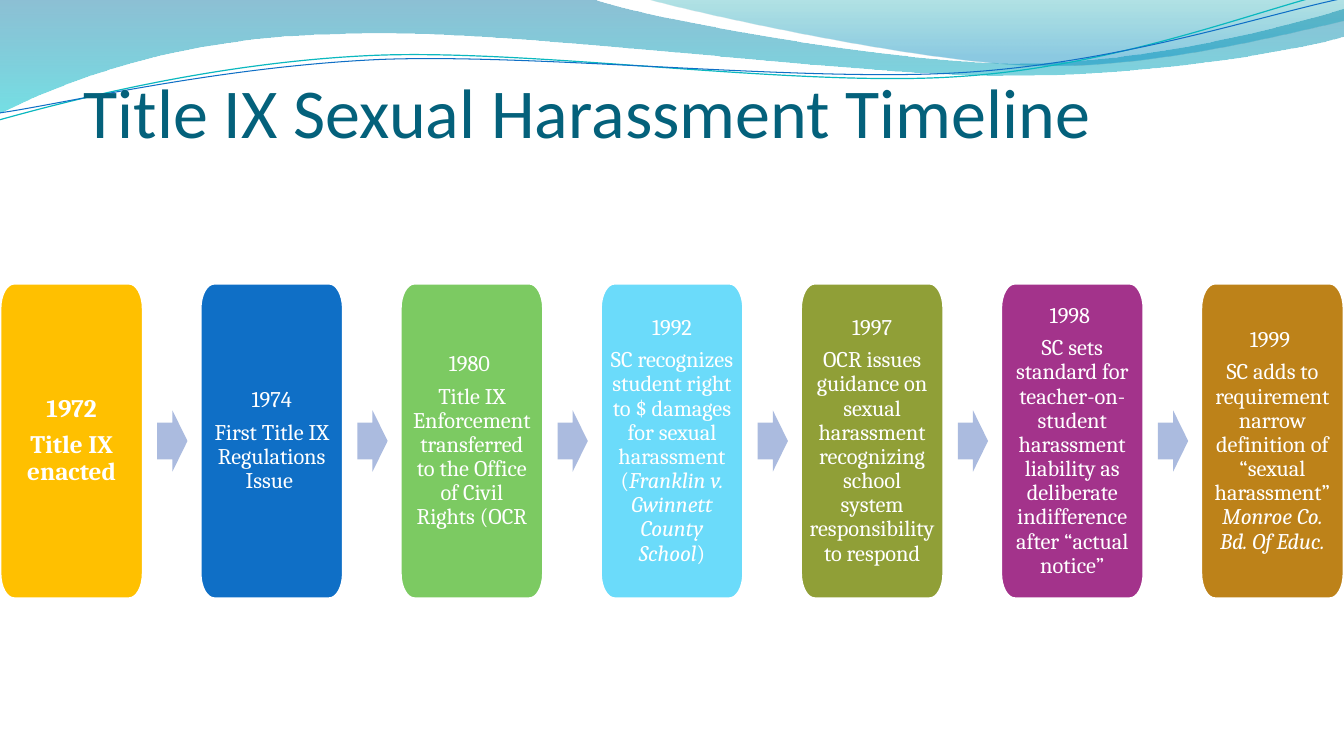
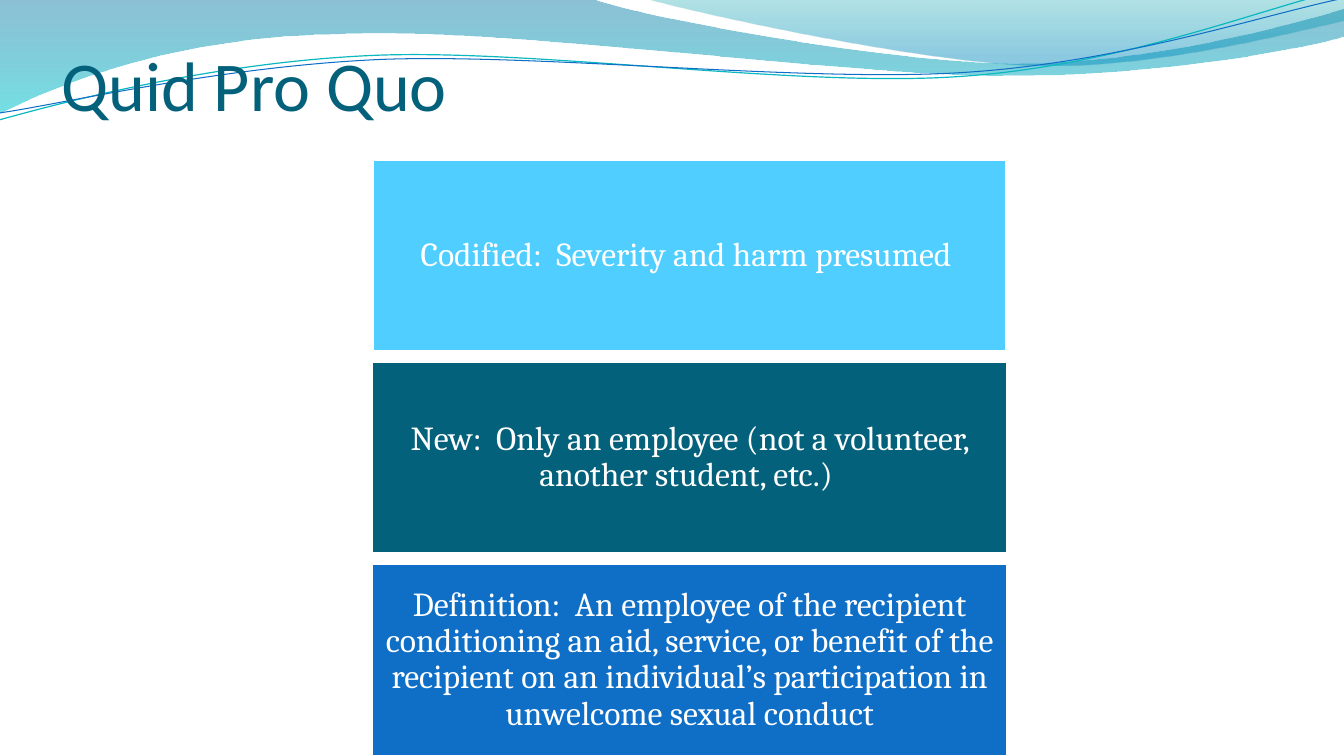
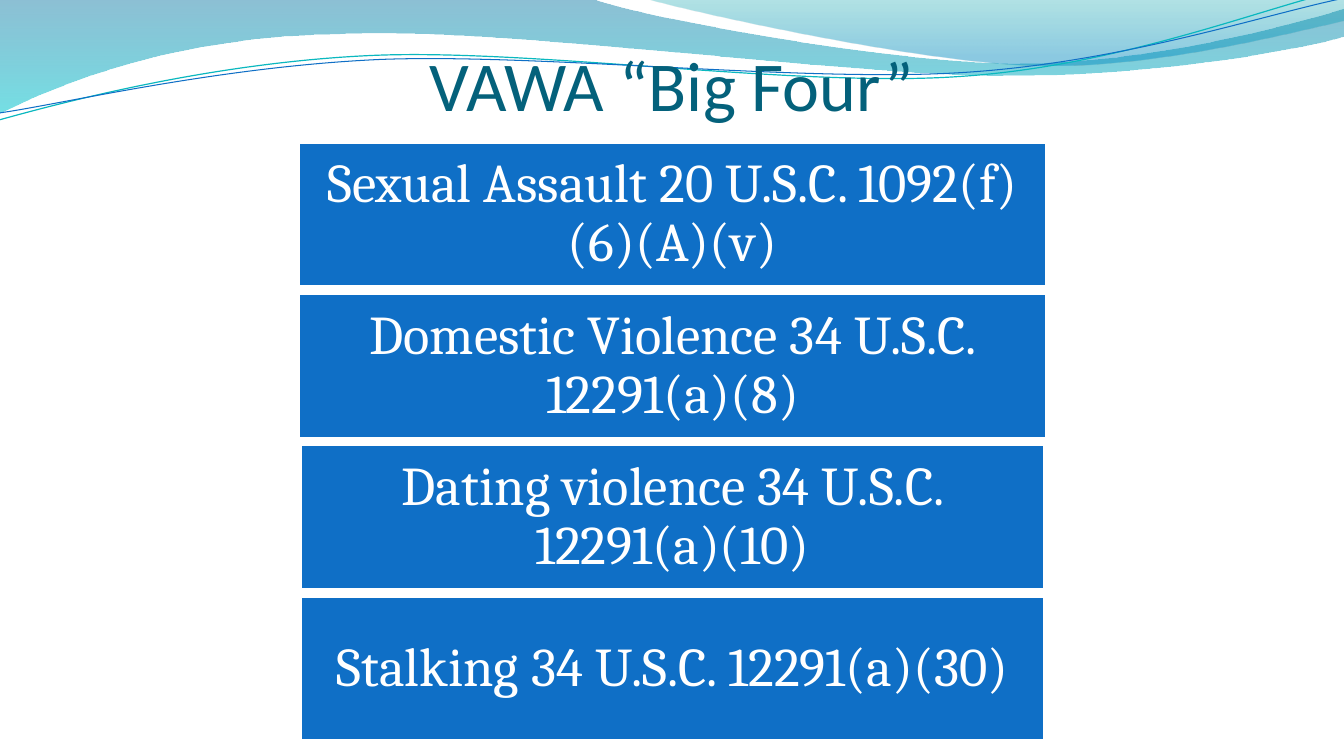
from dataclasses import dataclass

from lxml import etree
from pptx import Presentation
from pptx.dml.color import RGBColor
from pptx.enum.shapes import MSO_SHAPE
from pptx.enum.text import MSO_ANCHOR, MSO_AUTO_SIZE, PP_ALIGN
from pptx.oxml.ns import qn
from pptx.util import Inches, Pt

LEFT, CENTER = PP_ALIGN.LEFT, PP_ALIGN.CENTER
MIDDLE, BOTTOM = MSO_ANCHOR.MIDDLE, MSO_ANCHOR.BOTTOM
RECTANGLE, RIGHT_ARROW = MSO_SHAPE.RECTANGLE, MSO_SHAPE.RIGHT_ARROW
NO_AUTOFIT = MSO_AUTO_SIZE.NONE
TITLE_ONLY = 5


@dataclass(frozen=True)
class Theme:
    heading_font: str = "Calibri"
    body_font: str = "Cambria"
    title_size: int = 50
    first_card_size: int = 18
    card_size: int = 16
    quid_size: int = 24
    offence_size: int = 39
    white: str = "FFFFFF"
    teal: str = "04617B"
    blue: str = "0F6FC6"
    sky: str = "4FCEFF"
    aqua: str = "0AB8BF"
    arrow: str = "ABBBDF"
    gold: str = "FFC000"
    green: str = "7CCA62"
    cyan: str = "6BDBFA"
    olive: str = "909F37"
    purple: str = "A3338B"
    bronze: str = "BD8219"


THEME = Theme()

# Outlines: a start point, then line ends (2 numbers) or Bézier curves (6 numbers)
WAVE_BANDS = [
    ([(0, 0), (5.87, -0.01),
      (6.34, 0.17, 8.85, 0.63, 10.11, 0.63),
      (11.38, 0.63, 12.78, 0.26, 13.33, 0.09), (13.35, 0.36),
      (13.11, 0.44, 11.6, 0.76, 9.94, 0.75),
      (8.29, 0.75, 5.09, 0.28, 3.43, 0.34),
      (1.72, 0.36, 0.61, 0.83, -0.01, 1.13)],
     [(0, "0074A1", 45), (1, "00C6CF", 55)]),
    ([(6.39, -0.01),
      (6.79, 0.11, 9.09, 0.62, 10.25, 0.65),
      (11.41, 0.69, 12.82, 0.32, 13.33, 0.21), (13.33, 0)],
     [(0, "00A1A9", 30), (0.8, "008BBF", 45)]),
]
WAVE_LINES = [
    ([(-0.01, 1.19),
      (0.64, 1.01, 2.11, 0.62, 3.69, 0.55),
      (5.27, 0.48, 7.9, 0.87, 9.5, 0.76),
      (11.1, 0.66, 12.52, 0.08, 13.31, -0.1)], THEME.aqua, 0.85),
    ([(0, 1.12),
      (0.63, 1.03, 2.18, 0.66, 3.78, 0.59),
      (5.37, 0.53, 7.96, 0.82, 9.55, 0.72),
      (11.15, 0.62, 12.55, 0.14, 13.34, -0.02)], THEME.blue, 0.75),
]

# Timeline cards: fill, year, then the (text, italic) runs below it
TIMELINE = [
    (THEME.gold, "1972", [("Title IX enacted", False)]),
    (THEME.blue, "1974", [("First Title IX Regulations Issue ", False)]),
    (THEME.green, "1980 ", [
        ("Title IX Enforcement transferred to the Office of Civil Rights (OCR", False)]),
    (THEME.cyan, "1992", [
        ("SC recognizes student right to $ damages for sexual harassment (", False),
        ("Franklin v. Gwinnett County School", True), (")", False)]),
    (THEME.olive, "1997", [
        ("OCR issues guidance on sexual harassment recognizing school system "
         "responsibility to respond", False)]),
    (THEME.purple, "1998 ", [
        ("SC sets standard for teacher-on-student harassment liability as "
         "deliberate indifference after “actual notice”", False)]),
    (THEME.bronze, "1999 ", [
        ("SC adds to requirement narrow definition of “sexual harassment” ", False),
        ("Monroe Co. Bd. Of Educ.", True)]),
]

# Stacked bars: width, fill, text
QUID_PRO_QUO = [
    (6.28, THEME.sky, "Codified:  Severity and harm presumed "),
    (6.31, THEME.teal,
     "New:  Only an employee (not a volunteer, another student, etc.) "),
    (6.3, THEME.blue,
     "Definition:  An employee of the recipient conditioning an aid, service, or "
     "benefit of the recipient on an individual’s participation in unwelcome "
     "sexual conduct"),
]
BIG_FOUR = [
    (7.42, THEME.blue, "Sexual Assault 20 U.S.C. 1092(f)(6)(A)(v)"),
    (7.42, THEME.blue, "Domestic Violence 34 U.S.C. 12291(a)(8)"),
    (7.38, THEME.blue, "Dating violence 34 U.S.C. 12291(a)(10)"),
    (7.38, THEME.blue, "Stalking 34 U.S.C. 12291(a)(30)"),
]


def rgb(value):
    return RGBColor.from_string(value)


def add_outline(page, outline, closed=True):
    """Build a freeform, then join each curve's three points into one Bézier."""
    start, *segments = outline
    points = [(Inches(segment[i]), Inches(segment[i + 1]))
              for segment in segments for i in range(0, len(segment), 2)]
    builder = page.shapes.build_freeform(Inches(start[0]), Inches(start[1]))
    builder.add_line_segments(points, close=closed)
    shape = builder.convert_to_shape()
    shape.shadow.inherit = False
    lines = iter(list(shape.element.iter(qn("a:lnTo"))))
    for segment in segments:
        line = next(lines)
        if len(segment) == 6:
            line.addprevious(etree.Element(qn("a:cubicBezTo")))
            curve = line.getprevious()
            for step in (line, next(lines), next(lines)):
                curve.append(step[0])
                step.getparent().remove(step)
    return shape


def paint(shape, fill, line=None):
    shape.shadow.inherit = False
    shape.fill.solid()
    shape.fill.fore_color.rgb = rgb(fill)
    if line:
        shape.line.color.rgb = rgb(line)
        shape.line.width = Pt(2)
    else:
        shape.line.fill.background()


def write_centered(shape, paragraphs, size, inset, bold=False):
    """Fill a shape with paragraphs, each a list of (text, italic) runs."""
    frame = shape.text_frame
    frame.word_wrap = True
    frame.vertical_anchor = MIDDLE
    frame.margin_left = frame.margin_right = Inches(inset)
    frame.margin_top = frame.margin_bottom = Inches(inset)
    for index, runs in enumerate(paragraphs):
        para = frame.add_paragraph() if index else frame.paragraphs[0]
        para.alignment = CENTER
        para.line_spacing = 0.9
        para.space_after = Pt(round(size * 0.35))
        for text, italic in runs:
            span = para.add_run()
            span.text = text
            span.font.name = THEME.body_font
            span.font.size = Pt(size)
            span.font.bold = bold
            span.font.italic = italic
            span.font.color.rgb = rgb(THEME.white)


def add_waves(page, master):
    """Draw the wave header once and hand it to the slide master."""
    waves = []
    for outline, stops in WAVE_BANDS:
        band = add_outline(page, outline)
        band.line.fill.background()
        band.fill.gradient()
        band.fill.gradient_angle = 270
        for stop, (position, color, _) in zip(band.fill.gradient_stops, stops):
            stop.position = position
            stop.color.rgb = rgb(color)
        for color, (_, _, opacity) in zip(band.element.spPr.iter(qn("a:srgbClr")), stops):
            etree.SubElement(color, qn("a:alpha")).set("val", str(opacity * 1000))
        waves.append(band)
    for outline, color, width in WAVE_LINES:
        wave = add_outline(page, outline, closed=False)
        wave.fill.background()
        wave.line.color.rgb = rgb(color)
        wave.line.width = Pt(width)
        waves.append(wave)
    for number, wave in enumerate(waves, start=101):
        wave.element.nvSpPr.cNvPr.set("id", str(number))
        master.shapes.element.append(wave.element)


def add_page(deck, title, left=0.61, top=0, align=LEFT):
    page = deck.slides.add_slide(deck.slide_layouts[TITLE_ONLY])
    box = page.shapes.title
    box.left, box.top = Inches(left), Inches(top)
    box.width, box.height = Inches(12.11), Inches(1.25)
    frame = box.text_frame
    frame.auto_size = NO_AUTOFIT
    frame.word_wrap = True
    frame.vertical_anchor = BOTTOM
    frame.margin_left = frame.margin_right = frame.margin_bottom = 0
    frame.margin_top = Inches(0.05)
    para = frame.paragraphs[0]
    para.alignment = align
    span = para.add_run()
    span.text = title
    span.font.name = THEME.heading_font
    span.font.size = Pt(THEME.title_size)
    span.font.color.rgb = rgb(THEME.teal)
    return page


def card_outline(left, top, width, height):
    """Rounded card whose corners are taller than they are wide."""
    right, bottom = left + width, top + height
    across, down = 0.14, 0.25
    pull_x, pull_y = across * 0.45, down * 0.45
    return [
        (left, top + down),
        (left, top + pull_y, left + pull_x, top, left + across, top),
        (right - across, top),
        (right - pull_x, top, right, top + pull_y, right, top + down),
        (right, bottom - down),
        (right, bottom - pull_y, right - pull_x, bottom, right - across, bottom),
        (left + across, bottom),
        (left + pull_x, bottom, left, bottom - pull_y, left, bottom - down),
    ]


def add_timeline(page, cards, left, top, width, height):
    card_width, arrow_width, arrow_height = 1.42, 0.3, 0.61
    pitch = (width - card_width) / (len(cards) - 1)
    for index, (fill, year, runs) in enumerate(cards):
        card_left = left + index * pitch
        # Card
        card = add_outline(page, card_outline(card_left, top, card_width, height))
        paint(card, fill, THEME.white)
        first = index == 0
        size = THEME.first_card_size if first else THEME.card_size
        write_centered(card, [[(year, False)], runs], size, 0.09, bold=first)
        # Arrow to the next card
        if index < len(cards) - 1:
            arrow = page.shapes.add_shape(
                RIGHT_ARROW, Inches(card_left + card_width + 0.14),
                Inches(top + (height - arrow_height) / 2),
                Inches(arrow_width), Inches(arrow_height))
            arrow.adjustments[0] = 0.6
            arrow.adjustments[1] = 0.5
            paint(arrow, THEME.arrow)


def add_stack(page, bars, center, top, height, gap, size, inset):
    bar_height = (height - gap * (len(bars) - 1)) / len(bars)
    for index, (width, fill, text) in enumerate(bars):
        bar = page.shapes.add_shape(
            RECTANGLE, Inches(center - width / 2),
            Inches(top + index * (bar_height + gap)),
            Inches(width), Inches(bar_height))
        paint(bar, fill, THEME.white)
        write_centered(bar, [[(text, False)]], size, inset)


def main():
    deck = Presentation()
    deck.slide_width, deck.slide_height = Inches(13.33), Inches(7.5)

    # Timeline, with the shared wave header
    page = add_page(deck, "Title IX Sexual Harassment Timeline", left=0.83, top=0.26)
    add_waves(page, deck.slide_master)
    add_timeline(page, TIMELINE, left=0, top=2.81, width=13.33, height=3.13)

    # Quid pro quo
    page = add_page(deck, "Quid Pro Quo")
    add_stack(page, QUID_PRO_QUO, center=6.84, top=1.58, height=5.92, gap=0.1,
              size=THEME.quid_size, inset=0.07)

    # Big four offences
    page = add_page(deck, "VAWA “Big Four”", align=CENTER)
    add_stack(page, BIG_FOUR, center=6.67, top=1.41, height=5.94, gap=0.07,
              size=THEME.offence_size, inset=0.11)

    deck.save("out.pptx")


if __name__ == "__main__":
    main()
